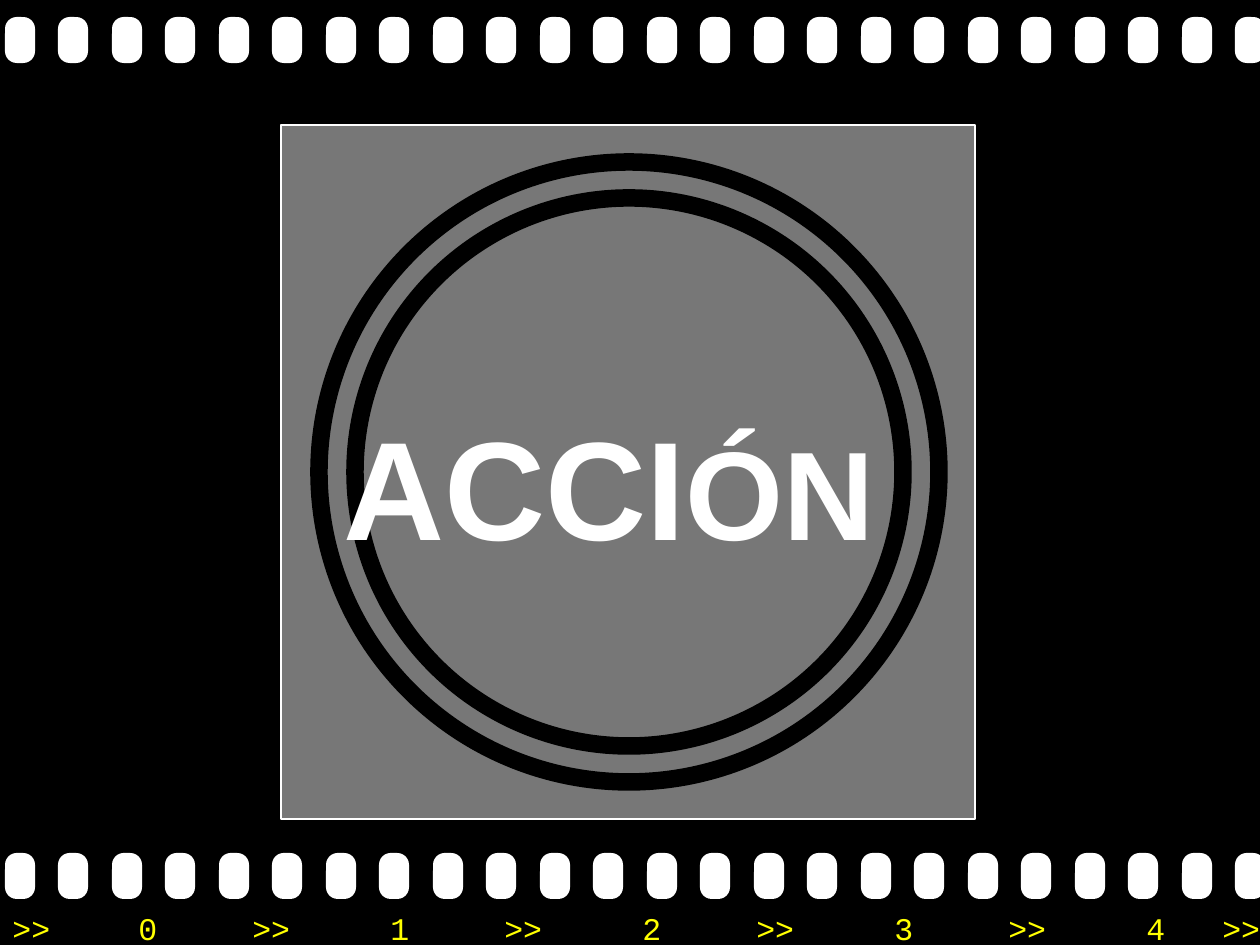
from lxml import etree
from pptx import Presentation
from pptx.dml.color import RGBColor
from pptx.enum.shapes import MSO_SHAPE
from pptx.enum.text import MSO_ANCHOR, PP_ALIGN
from pptx.oxml.ns import qn
from pptx.util import Emu, Pt

ROUNDED = MSO_SHAPE.ROUNDED_RECTANGLE
RECTANGLE = MSO_SHAPE.RECTANGLE
OVAL = MSO_SHAPE.OVAL
MIDDLE = MSO_ANCHOR.MIDDLE
TOP = MSO_ANCHOR.TOP
CENTER = PP_ALIGN.CENTER
LEFT = PP_ALIGN.LEFT

BLACK = RGBColor(0x00, 0x00, 0x00)
WHITE = RGBColor(0xFF, 0xFF, 0xFF)
GRAY = RGBColor(0x77, 0x77, 0x77)
YELLOW = RGBColor(0xFF, 0xFF, 0x00)


def px(*lengths):
    return [Emu(round(length * 914400 / 126)) for length in lengths]


def add_plain(shapes, kind, box, fill=None, line=None, weight=0):
    shape = shapes.add_shape(kind, *px(*box))
    shape.shadow.inherit = False
    if fill is None:
        shape.fill.background()
    else:
        shape.fill.solid()
        shape.fill.fore_color.rgb = fill
    if line is None:
        shape.line.fill.background()
    else:
        shape.line.color.rgb = line
        shape.line.width = Pt(weight)
    return shape


prs = Presentation()
prs.slide_width, prs.slide_height = px(1260, 945)
slide = prs.slides.add_slide(prs.slide_layouts[5])
slide.background.fill.solid()
slide.background.fill.fore_color.rgb = BLACK

for strip_top in (853, 17):
    strip = slide.shapes.add_group_shape()
    for i in range(24):
        hole = add_plain(strip.shapes, ROUNDED, (5 + i * 107 // 2, strip_top, 30, 46), WHITE)
        hole.adjustments[0] = 0.39

counter = slide.shapes.add_textbox(*px(0, 903, 1285, 50))
counter.text_frame.word_wrap = True
counter.text_frame.vertical_anchor = TOP
frames = counter.text_frame.paragraphs[0]
frames.text = "\t".join(f">>\t{number}" for number in range(5)) + "\t>>"
frames.alignment = LEFT
frames.font.name = "Courier New"
frames.font.size = Pt(18)
frames.font.color.rgb = YELLOW
number_stops = [126 + 252 * i for i in range(5)]
arrow_stops = [240 + 252 * i for i in range(4)] + [1210]
tab_list = etree.Element(qn("a:tabLst"))
for stop in px(*sorted(number_stops + arrow_stops)):
    etree.SubElement(tab_list, qn("a:tab"), pos=str(stop), algn="l")
frames.font._element.addprevious(tab_list)

add_plain(slide.shapes, RECTANGLE, (281, 125, 694, 694), GRAY, WHITE, 0.75)
for inset in (73, 37):
    side = 694 - 2 * inset
    add_plain(slide.shapes, OVAL, (282 + inset, 125 + inset, side, side), None, BLACK, 10)

title = slide.shapes.title
title.left, title.top, title.width, title.height = px(136, 248, 946, 473)
slide.shapes._spTree.append(title._element)
title_frame = title.text_frame
title_frame.word_wrap = False
title_frame.vertical_anchor = MIDDLE
title_frame.margin_left = title_frame.margin_right = 0
title_frame.margin_top = title_frame.margin_bottom = 0
action = title_frame.paragraphs[0]
action.alignment = CENTER
action.font.name = "Arial"
action.font.bold = True
action.font.color.rgb = WHITE
for letters, size in (("ACCI", 80), ("ÓN", 72)):
    run = action.add_run()
    run.text = letters
    run.font.size = Pt(size)

prs.save("out.pptx")
